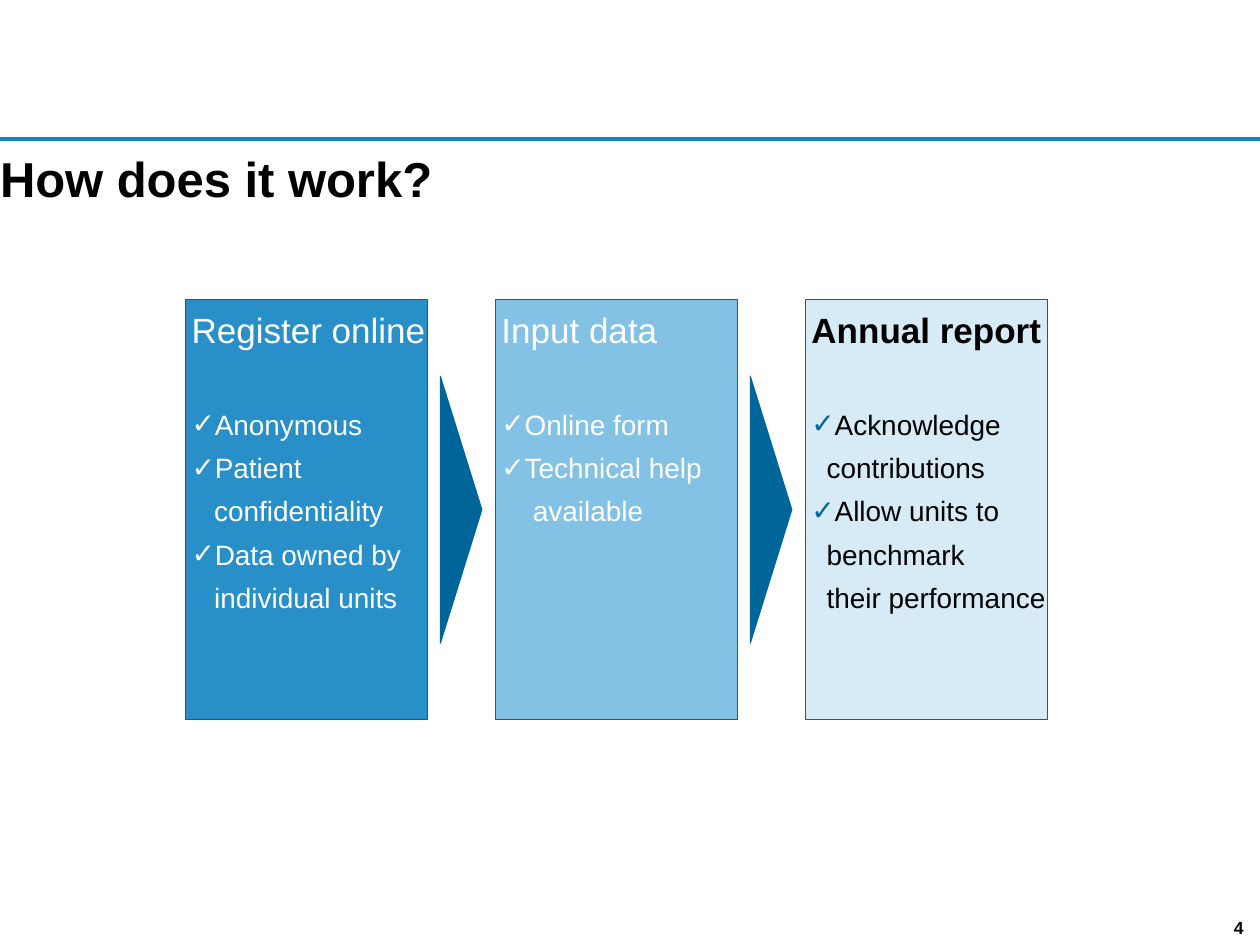
import pptx
import pptx.util
import pptx.dml.color
import pptx.enum.shapes
import pptx.enum.text
import lxml.etree

Inches = pptx.util.Inches
Pt = pptx.util.Pt
SHAPE = pptx.enum.shapes.MSO_SHAPE
ALIGN = pptx.enum.text.PP_ALIGN
NAVY = "006699"
TICK = "✓"
INDENT = 0.18


def color(code):
    return pptx.dml.color.RGBColor.from_string(code)


def add_tag(parent, name, **attrs):
    tag = lxml.etree.SubElement(parent, pptx.oxml.ns.qn(name))
    for key, value in attrs.items():
        tag.set(key, value)
    return tag


def set_font(para, size, code, bold=False):
    font = para.font
    font.name = "Arial"
    font.size = Pt(size)
    font.bold = bold
    font.color.rgb = color(code)


def set_frame(frame, left=0, top=0):
    frame.margin_left, frame.margin_top = Inches(left), Inches(top)
    frame.margin_right = frame.margin_bottom = 0
    frame.vertical_anchor = pptx.enum.text.MSO_ANCHOR.TOP


def add_label(slide, text, left, top, width, height, size, align, wrap):
    box = slide.shapes.add_textbox(
        Inches(left), Inches(top), Inches(width), Inches(height))
    frame = box.text_frame
    set_frame(frame)
    frame.word_wrap = wrap
    para = frame.paragraphs[0]
    para.text = text
    para.alignment = align
    set_font(para, size, "000000", True)


def add_rule(slide, top):
    rule = slide.shapes.add_connector(
        pptx.enum.shapes.MSO_CONNECTOR.STRAIGHT,
        0, Inches(top), Inches(10), Inches(top))
    rule.line.color.rgb = color("1782BF")
    rule.line.width = Pt(2.25)
    add_tag(rule._element.spPr, "a:effectLst")


def add_block(slide, kind, left, top, width, height, fill):
    block = slide.shapes.add_shape(
        kind, Inches(left), Inches(top), Inches(width), Inches(height))
    block.shadow.inherit = False
    block.fill.solid()
    block.fill.fore_color.rgb = color(fill)
    block.line.color.rgb = color(NAVY)
    block.line.width = Pt(0.5)
    return block


def set_indent(para, left, tick):
    props = para._p.get_or_add_pPr()
    props.set("marL", str(Inches(left)))
    props.set("indent", str(-Inches(left) if tick else 0))
    if tick:
        paint = add_tag(props, "a:buClr")
        add_tag(paint, "a:srgbClr", val=tick)
        add_tag(props, "a:buFont", typeface="Arial")
        add_tag(props, "a:buChar", char=TICK)
    else:
        add_tag(props, "a:buNone")


def add_panel(slide, left, fill, ink, tick, title, bold, hang, lines):
    panel = add_block(slide, SHAPE.RECTANGLE, left, 2.38, 1.92, 3.33, fill)
    frame = panel.text_frame
    set_frame(frame, 0.05, 0.07)
    frame.word_wrap = False
    head = frame.paragraphs[0]
    head.text = title
    head.alignment = ALIGN.LEFT
    set_font(head, 20, ink, bold)
    for index, line in enumerate(lines):
        para = frame.add_paragraph()
        para.text = line.removeprefix(TICK)
        para.alignment = ALIGN.LEFT
        para.space_before = Pt(5.5 if index else 32.5)
        if line.startswith(TICK):
            set_indent(para, INDENT, tick)
        else:
            set_indent(para, hang, None)
        set_font(para, 16, ink)


def add_arrow(slide, left):
    arrow = add_block(slide, SHAPE.ISOSCELES_TRIANGLE,
                      left, 3.88, 2.12, 0.33, NAVY)
    arrow.rotation = 90


def main():
    deck = pptx.Presentation()
    deck.slide_width, deck.slide_height = Inches(10), Inches(7.5)
    slide = deck.slides.add_slide(deck.slide_layouts[6])
    add_rule(slide, 1.1)
    add_label(slide, "How does it work?", 0, 1.18, 9.05, 0.5, 28,
              ALIGN.LEFT, True)
    add_label(slide, "4", 9.68, 7.28, 0.19, 0.15, 10, ALIGN.RIGHT, False)
    panels = [
        ("288FC8", "FFFFFF", "FFFFFF", "Register online", False, 0.18,
         ["✓Anonymous", "✓Patient", "confidentiality",
          "✓Data owned by", "individual units"]),
        ("83C2E5", "FFFFFF", "FFFFFF", "Input data", False, 0.25,
         ["✓Online form", "✓Technical help", "available"]),
        ("D6EBF6", "000000", NAVY, "Annual report", True, 0.12,
         ["✓Acknowledge", "contributions", "✓Allow units to",
          "benchmark", "their performance"]),
    ]
    step = 2.46
    for index, panel in enumerate(panels):
        add_panel(slide, 1.47 + index * step, *panel)
    for index in range(len(panels) - 1):
        add_arrow(slide, 2.6 + index * step)
    deck.save("out.pptx")


if __name__ == "__main__":
    main()
